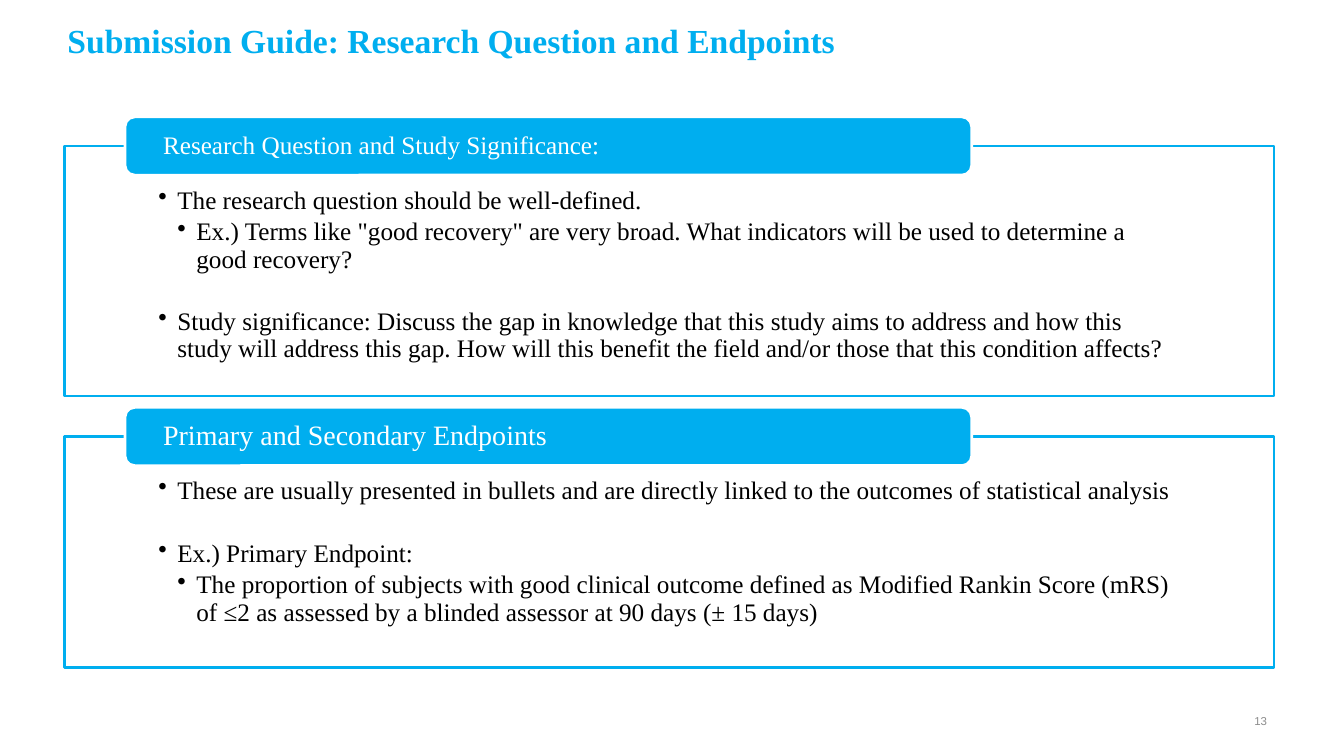
from lxml import etree
from pptx import Presentation
from pptx.dml.color import RGBColor
from pptx.enum.shapes import MSO_SHAPE
from pptx.enum.text import MSO_ANCHOR, MSO_AUTO_SIZE, PP_ALIGN
from pptx.oxml.ns import qn
from pptx.util import Cm, Pt

RECTANGLE, ROUNDED = MSO_SHAPE.RECTANGLE, MSO_SHAPE.ROUNDED_RECTANGLE
TOP, MIDDLE = MSO_ANCHOR.TOP, MSO_ANCHOR.MIDDLE
LEFT, RIGHT = PP_ALIGN.LEFT, PP_ALIGN.RIGHT

THEME = {
    "accent": RGBColor(0x00, 0xAE, 0xEF),
    "white": RGBColor(0xFF, 0xFF, 0xFF),
    "black": RGBColor(0x00, 0x00, 0x00),
    "gray": RGBColor(0x8C, 0x8C, 0x8C),
    "serif": "Times New Roman",
    "sans": "Arial",
    "title_size": 24,
    "body_size": 18,
    "number_size": 8.2,
}
FRAME_LEFT, FRAME_WIDTH = 1.63, 30.48
HEADER_LEFT, HEADER_WIDTH, HEADER_HEIGHT = 3.15, 21.34, 1.47
INDENT = 0.48
LINE_SPACING = 0.9
GAP_AFTER, WIDE_GAP_AFTER = 3.3, 25.2

# Each bullet: level, text, whether a wide gap follows
SECTIONS = [
    {
        "top": 3.68, "height": 6.3, "header_size": 18,
        "header": "Research Question and Study Significance:",
        "bullets": [
            (1, "The research question should be well-defined.", False),
            (2, 'Ex.) Terms like "good recovery" are very broad. What indicators '
                "will be used to determine a good recovery?", True),
            (1, "Study significance: Discuss the gap in knowledge that this study "
                "aims to address and how this study will address this gap. How will "
                "this benefit the field and/or those that this condition affects?", False),
        ],
    },
    {
        "top": 11, "height": 5.82, "header_size": 20,
        "header": "Primary and Secondary Endpoints",
        "bullets": [
            (1, "These are usually presented in bullets and are directly linked to "
                "the outcomes of statistical analysis", True),
            (1, "Ex.) Primary Endpoint:", False),
            (2, "The proportion of subjects with good clinical outcome defined as "
                "Modified Rankin Score (mRS) of ≤2 as assessed by a blinded assessor "
                "at 90 days (± 15 days)", False),
        ],
    },
]


def format_frame(shape, anchor, left, top, right, bottom):
    """Set wrapping, anchor and insets (in cm) of a shape's text."""
    settings = {
        "word_wrap": True, "auto_size": MSO_AUTO_SIZE.NONE, "vertical_anchor": anchor,
        "margin_left": Cm(left), "margin_top": Cm(top),
        "margin_right": Cm(right), "margin_bottom": Cm(bottom),
    }
    for name, value in settings.items():
        setattr(shape.text_frame, name, value)
    return shape.text_frame


def write(paragraph, text, size, color, font="serif", bold=False, alignment=LEFT):
    paragraph.alignment = alignment
    run = paragraph.add_run()
    run.text = text
    run.font.color.rgb = THEME[color]
    for name, value in {"name": THEME[font], "size": Pt(size), "bold": bold}.items():
        setattr(run.font, name, value)


presentation = Presentation()
presentation.slide_width, presentation.slide_height = Cm(33.87), Cm(19.05)
slide = presentation.slides.add_slide(presentation.slide_layouts[5])

title = slide.shapes.title
title.left, title.top, title.width, title.height = Cm(1.45), Cm(0.28), Cm(30.48), Cm(1.73)
title_frame = format_frame(title, TOP, 0.25, 0.23, 0.25, 0.13)
write(title_frame.paragraphs[0], "Submission Guide: Research Question and Endpoints",
      THEME["title_size"], "accent", bold=True)

for section in SECTIONS:
    frame = slide.shapes.add_shape(
        RECTANGLE, Cm(FRAME_LEFT), Cm(section["top"]), Cm(FRAME_WIDTH), Cm(section["height"]))
    header = slide.shapes.add_shape(
        ROUNDED, Cm(HEADER_LEFT), Cm(section["top"] - HEADER_HEIGHT / 2),
        Cm(HEADER_WIDTH), Cm(HEADER_HEIGHT))
    for shape, fill, line in ((frame, "white", "accent"), (header, "accent", "white")):
        shape.shadow.inherit = False
        shape.fill.solid()
        shape.fill.fore_color.rgb = THEME[fill]
        shape.line.color.rgb = THEME[line]
        shape.line.width = Pt(2)
    fill_color = frame.element.spPr.find(qn("a:solidFill")).find(qn("a:srgbClr"))
    etree.SubElement(fill_color, qn("a:alpha"), val="90000")

    body = format_frame(frame, TOP, 2.36, 1.04, 2.36, 0.36)
    for index, (level, text, wide_gap) in enumerate(section["bullets"]):
        paragraph = body.add_paragraph() if index else body.paragraphs[0]
        paragraph.line_spacing = LINE_SPACING
        paragraph.space_after = Pt(WIDE_GAP_AFTER if wide_gap else GAP_AFTER)
        properties = paragraph._p.get_or_add_pPr()
        properties.set("marL", str(Cm(INDENT * level)))
        properties.set("indent", str(-Cm(INDENT)))
        etree.SubElement(properties, qn("a:buChar"), char="•")
        write(paragraph, text, THEME["body_size"], "black")

    label = format_frame(header, MIDDLE, 0.89, 0, 0.89, 0).paragraphs[0]
    label.line_spacing = LINE_SPACING
    write(label, section["header"], section["header_size"], "white")

number = slide.shapes.add_textbox(Cm(24.28), Cm(17.65), Cm(7.9), Cm(1.02))
number_frame = format_frame(number, MIDDLE, 0.25, 0.13, 0.25, 0.13)
write(number_frame.paragraphs[0], "13", THEME["number_size"], "gray", "sans", alignment=RIGHT)

presentation.save("out.pptx")
